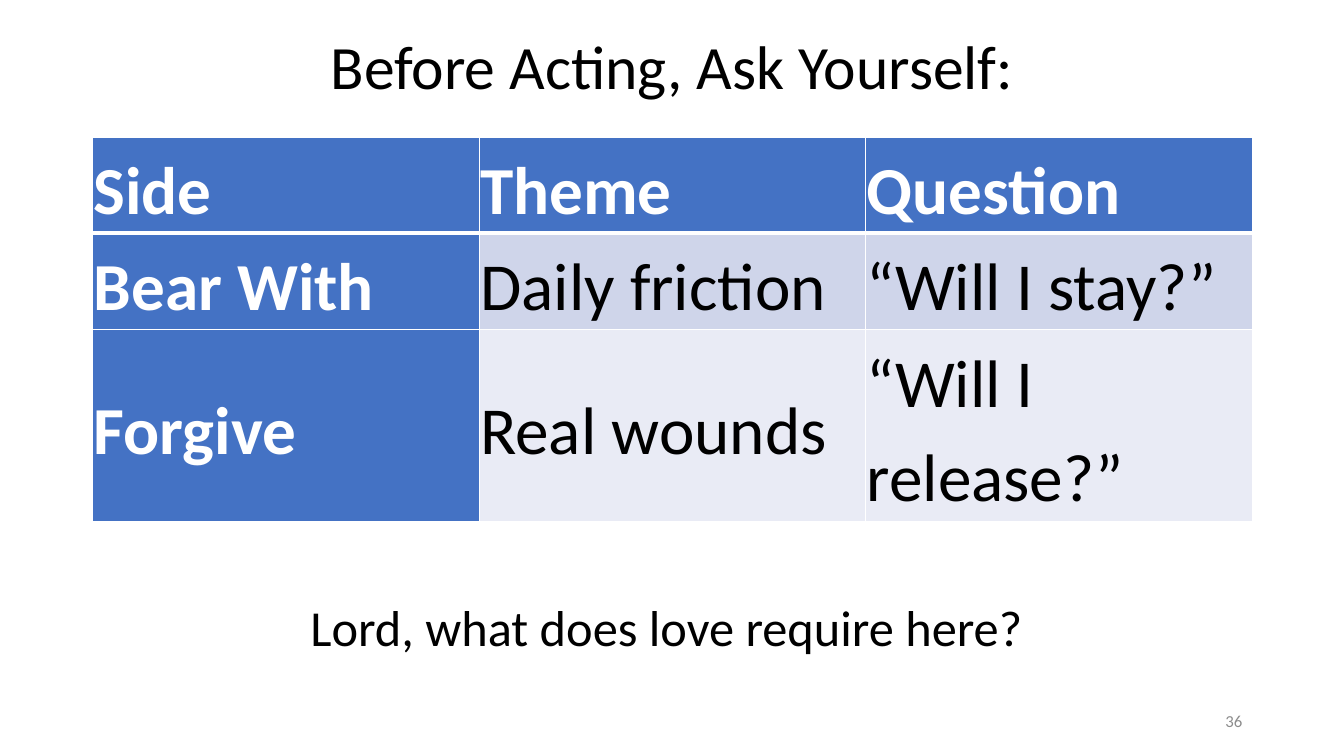
from dataclasses import dataclass

from lxml.etree import SubElement
from pptx import Presentation
from pptx.dml.color import RGBColor
from pptx.enum.text import MSO_ANCHOR as Anchor, MSO_AUTO_SIZE as AutoSize, PP_ALIGN as Align
from pptx.oxml.ns import qn
from pptx.util import Inches, Pt


@dataclass(frozen=True)
class Theme:
    font: str = "Calibri"
    ink: str = "000000"
    paper: str = "FFFFFF"
    muted: str = "8C8C8C"
    accent: str = "4472C4"
    bands: tuple = ("CFD5EA", "E9EBF5")
    title_size: int = 44
    table_size: int = 48
    prayer_size: int = 36
    number_size: int = 12
    thin_rule: int = 1
    thick_rule: int = 3


class SlideBuilder:
    def __init__(self, page, theme):
        self.page = page
        self.theme = theme

    def style(self, para, size, color, bold=False):
        font = para.font
        font.name, font.size, font.bold = self.theme.font, Pt(size), bold
        font.color.rgb = RGBColor.from_string(color)

    def place(self, shape, area):
        shape.left, shape.top, shape.width, shape.height = map(Inches, area)

    def title(self, text, area):
        box = self.page.shapes.title
        self.place(box, area)
        frame = box.text_frame
        frame.text = text
        frame.vertical_anchor = Anchor.MIDDLE
        para = frame.paragraphs[0]
        para.alignment, para.line_spacing = Align.CENTER, 0.9
        self.style(para, self.theme.title_size, self.theme.ink)

    def text(self, text, area, size, color, align=Align.LEFT, anchor=Anchor.TOP, wrap=True):
        frame = self.page.shapes.add_textbox(*map(Inches, area)).text_frame
        frame.text = text
        frame.word_wrap, frame.vertical_anchor = wrap, anchor
        frame.auto_size = AutoSize.NONE if wrap else AutoSize.SHAPE_TO_FIT_TEXT
        para = frame.paragraphs[0]
        para.alignment = align
        self.style(para, size, color)

    def table(self, rows, area, heights):
        shape = self.page.shapes.add_table(len(rows), len(rows[0]), *map(Inches, area))
        grid = shape.table
        for column in grid.columns:
            column.width = Inches(area[2] / len(rows[0]))
        for r, (texts, height) in enumerate(zip(rows, heights)):
            grid.rows[r].height = Inches(height)
            for c, text in enumerate(texts):
                self.cell(grid.cell(r, c), text, r, c)

    def cell(self, cell, text, row, column):
        theme = self.theme
        heading = row == 0 or column == 0
        cell.text = text
        cell.vertical_anchor = Anchor.MIDDLE
        cell.margin_left = cell.margin_right = Inches(0.01)
        cell.margin_top = cell.margin_bottom = Inches(0.01)
        para = cell.text_frame.paragraphs[0]
        para.line_spacing, para.space_after = 1.15, Pt(8)
        self.style(para, theme.table_size, theme.paper if heading else theme.ink, heading)
        self.borders(cell, top=theme.thick_rule if row == 1 else theme.thin_rule,
                     bottom=theme.thick_rule if row == 0 else theme.thin_rule)
        cell.fill.solid()
        fill = theme.accent if heading else theme.bands[(row - 1) % 2]
        cell.fill.fore_color.rgb = RGBColor.from_string(fill)

    def borders(self, cell, top, bottom):
        """Add the rules before the cell gets its fill, as the schema orders them."""
        properties = cell._tc.get_or_add_tcPr()
        thin = self.theme.thin_rule
        for side, width in (("L", thin), ("R", thin), ("T", top), ("B", bottom)):
            line = SubElement(properties, qn(f"a:ln{side}"), w=str(Pt(width)))
            fill = SubElement(line, qn("a:solidFill"))
            SubElement(fill, qn("a:srgbClr"), val=self.theme.paper)


def main():
    deck = Presentation()
    deck.slide_width, deck.slide_height = Inches(13.33), Inches(7.5)
    theme = Theme()
    title_only = deck.slide_layouts[5]
    slide = SlideBuilder(deck.slides.add_slide(title_only), theme)

    slide.title("Before Acting, Ask Yourself:", (0.92, 0.17, 11.5, 1.04))
    slide.text("36", (9.42, 6.95, 3, 0.4), theme.number_size, theme.muted,
               Align.RIGHT, Anchor.MIDDLE)
    questions = [
        ("Side", "Theme", "Question"),
        ("Bear With", "Daily friction", "“Will I stay?”"),
        ("Forgive", "Real wounds", "“Will I release?”"),
    ]
    slide.table(questions, (0.92, 1.36, 11.5, 3.8), heights=(0.95, 0.95, 1.9))
    slide.text("Lord, what does love require here?", (2.98, 5.86, 7.33, 0.71),
               theme.prayer_size, theme.ink, wrap=False)
    deck.save("out.pptx")


if __name__ == "__main__":
    main()
